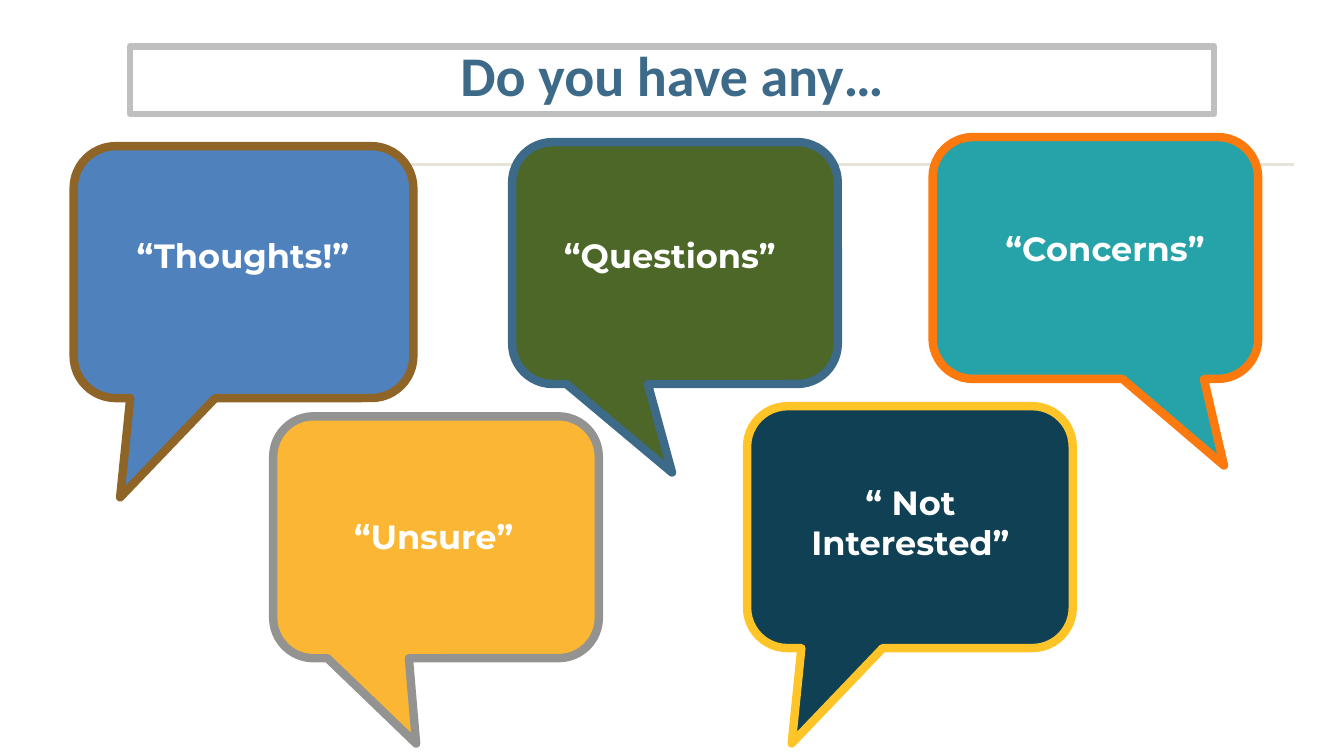
from pptx import Presentation
from pptx.dml.color import RGBColor
from pptx.enum.shapes import MSO_CONNECTOR, MSO_SHAPE
from pptx.enum.text import MSO_ANCHOR, MSO_AUTO_SIZE, PP_ALIGN
from pptx.oxml.ns import qn
from pptx.util import Inches, Pt
from lxml import etree

STRAIGHT = MSO_CONNECTOR.STRAIGHT
RECTANGLE = MSO_SHAPE.RECTANGLE
CALLOUT = MSO_SHAPE.ROUNDED_RECTANGULAR_CALLOUT
MIDDLE = MSO_ANCHOR.MIDDLE
GROW = MSO_AUTO_SIZE.SHAPE_TO_FIT_TEXT
CENTER = PP_ALIGN.CENTER

WIDE, STANDARD = (25.28, 33.33), (24.23, 32)
CORNER = 0.167

# Bubble place, size, tail tip, fill and border; then caption text and box.
# All lengths are percentages of the slide's width and height.
BUBBLES = [
    ((5.48, 19.33), WIDE, (-0.363, 0.894), "4F81BD", "8F6427",
     "“Thoughts!”", (6.23, 30.4, 23.7, 6.67)),
    ((55.59, 53.73), STANDARD, (-0.363, 0.894), "0F4054", "FFC528",
     "“ Not Interested”", (58.14, 63.07, 19.2, 12.13)),
    ((69.39, 18.13), STANDARD, (0.395, 0.858), "26A3A8", "FC7A0D",
     "“Concerns”", (70.82, 29.47, 22.8, 6.67)),
    ((20.33, 55.07), STANDARD, (-0.061, 0.853), "FBB733", "939491",
     "“Unsure”", (21.08, 67.6, 22.36, 6.67)),
    ((38.11, 18.8), STANDARD, (-0.009, 0.866), "4C6728", "3C6A88",
     "“Questions”", (37.73, 30.4, 24.23, 6.67)),
]


def color(hex_code):
    return RGBColor.from_string(hex_code)


class SlideBuilder:
    title_font, title_size, title_color = "Calibri", 40, "3C6A88"
    caption_font, caption_size, caption_color = "Montserrat", 24, "FFFFFF"
    frame_color, frame_width = "BFBFBF", 4.5
    rule_color, rule_width = "E6E4D9", 2.25
    bubble_border = 6

    def __init__(self, deck):
        self.width, self.height = deck.slide_width, deck.slide_height
        self.shapes = deck.slides.add_slide(deck.slide_layouts[6]).shapes

    def place(self, left, top, width, height):
        """Turn percentages of the slide into lengths."""
        return [round(share * side / 100) for share, side in
                zip((left, top, width, height), (self.width, self.height) * 2)]

    def outline(self, item, hex_code, points):
        item.line.color.rgb = color(hex_code)
        item.line.width = Pt(points)

    def set_text(self, frame, text, font, size, hex_code):
        frame.word_wrap = True
        frame.auto_size = GROW
        paragraph = frame.paragraphs[0]
        paragraph.text = text
        paragraph.alignment = CENTER
        paragraph.font.name = font
        paragraph.font.size = Pt(size)
        paragraph.font.bold = True
        paragraph.font.color.rgb = color(hex_code)
        return paragraph

    def rule(self, left, right, top):
        start_x, y, end_x, _ = self.place(left, top, right, top)
        rule = self.shapes.add_connector(STRAIGHT, start_x, y, end_x, y)
        self.outline(rule, self.rule_color, self.rule_width)
        properties = rule._element.find(qn("p:spPr"))
        etree.SubElement(properties, qn("a:effectLst"))

    def title(self, text, *box):
        frame = self.shapes.add_shape(RECTANGLE, *self.place(*box))
        frame.shadow.inherit = False
        frame.fill.background()
        self.outline(frame, self.frame_color, self.frame_width)
        frame.text_frame.vertical_anchor = MIDDLE
        heading = self.set_text(frame.text_frame, text, self.title_font,
                                self.title_size, self.title_color)
        heading.line_spacing = Pt(self.title_size)

    def bubble(self, corner, size, tail, fill, border):
        bubble = self.shapes.add_shape(CALLOUT, *self.place(*corner, *size))
        bubble.shadow.inherit = False
        for index, value in enumerate((*tail, CORNER)):
            bubble.adjustments[index] = value
        bubble.fill.solid()
        bubble.fill.fore_color.rgb = color(fill)
        self.outline(bubble, border, self.bubble_border)

    def caption(self, text, box):
        caption = self.shapes.add_textbox(*self.place(*box))
        self.set_text(caption.text_frame, text, self.caption_font,
                      self.caption_size, self.caption_color)


def main():
    deck = Presentation()
    deck.slide_width, deck.slide_height = Inches(13.33), Inches(7.5)
    slide = SlideBuilder(deck)
    slide.rule(5.63, 96.25, 21.73)
    slide.title("Do you have any…", 9.68, 6.13, 80.65, 8.93)
    for *bubble, text, box in BUBBLES:
        slide.bubble(*bubble)
        slide.caption(text, box)
    deck.save("out.pptx")


if __name__ == "__main__":
    main()
